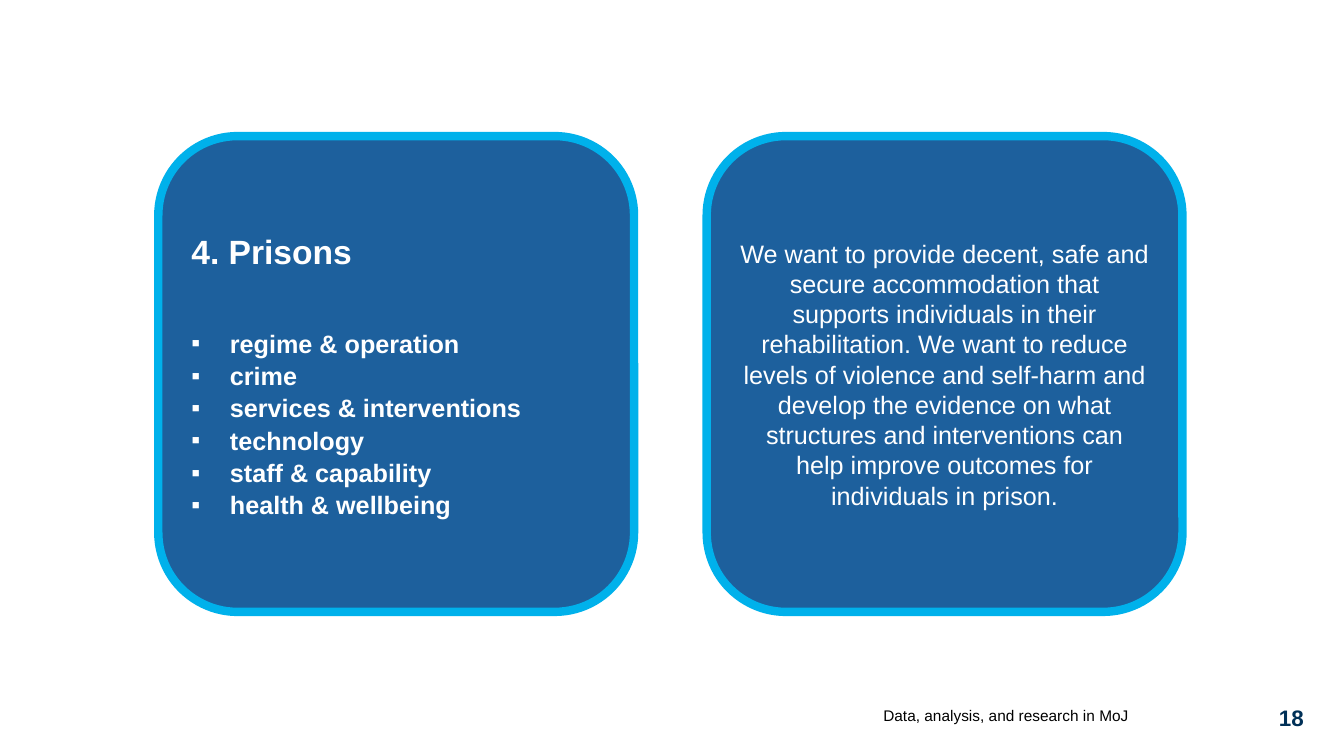
from lxml import etree
from pptx import Presentation
from pptx.dml.color import RGBColor
from pptx.enum import shapes, text
from pptx.oxml import ns
from pptx.util import Cm, Pt


class Theme:
    font = "Arial"
    panel = RGBColor.from_string("1D609D")
    border = RGBColor.from_string("00B1EB")
    white = RGBColor.from_string("FFFFFF")
    black = RGBColor.from_string("000000")
    navy = RGBColor.from_string("003057")
    heading_size = Pt(24)
    body_size = Pt(18)
    number_size = Pt(16)
    footer_size = Pt(11)


def style(paragraph, size, color, bold, align):
    paragraph.alignment = align
    for run in paragraph.runs:
        run.font.name = Theme.font
        run.font.size = size
        run.font.bold = bold
        run.font.color.rgb = color


LEFT, CENTER, RIGHT = text.PP_ALIGN.LEFT, text.PP_ALIGN.CENTER, text.PP_ALIGN.RIGHT
MIDDLE, TOP = text.MSO_ANCHOR.MIDDLE, text.MSO_ANCHOR.TOP

topics = [
    "regime & operation",
    "crime",
    "services & interventions",
    "technology",
    "staff & capability",
    "health & wellbeing",
]
aim = (
    "We want to provide decent, safe and secure accommodation that supports "
    "individuals in their rehabilitation. We want to reduce levels of violence "
    "and self-harm and develop the evidence on what structures and interventions "
    "can help improve outcomes for individuals in prison."
)

deck = Presentation()
deck.slide_width, deck.slide_height = Cm(33.87), Cm(19.05)
slide = deck.slides.add_slide(deck.slide_layouts[6])

footers = [
    ("Data, analysis, and research in MoJ", (20.55, 17.58, 7.9, 0.91),
     Theme.footer_size, Theme.black, False, RIGHT, MIDDLE),
    ("18", (32.05, 17.75, 0.99, 0.71),
     Theme.number_size, Theme.navy, True, CENTER, TOP),
]
for wording, place, size, color, bold, align, anchor in footers:
    frame = slide.shapes.add_textbox(*map(Cm, place)).text_frame
    frame.word_wrap = True
    frame.vertical_anchor = anchor
    frame.margin_left = frame.margin_right = frame.margin_top = frame.margin_bottom = 0
    frame.text = wording
    style(frame.paragraphs[0], size, color, bold, align)

panel_side, panel_pitch = 11.99, 13.82
panel_texts = []
for column in range(2):
    panel = slide.shapes.add_shape(
        shapes.MSO_SHAPE.ROUNDED_RECTANGLE,
        Cm(3.99 + column * panel_pitch), Cm(3.43), Cm(panel_side), Cm(panel_side))
    panel.shadow.inherit = False
    panel.fill.solid()
    panel.fill.fore_color.rgb = Theme.panel
    panel.line.color.rgb = Theme.border
    panel.line.width = Pt(6)
    panel.text_frame.word_wrap = True
    panel.text_frame.vertical_anchor = MIDDLE
    panel_texts.append(panel.text_frame)
prisons, purpose = panel_texts

prisons.text = "\n".join(["4. Prisons"] + topics)
heading, *topic_lines = prisons.paragraphs
style(heading, Theme.heading_size, Theme.white, True, LEFT)
heading.line_spacing = 1.07
heading.space_after = Pt(39)

for topic in topic_lines:
    properties = topic._p.get_or_add_pPr()
    properties.set("marL", str(Cm(0.97)))
    properties.set("indent", str(-Cm(0.97)))
    etree.SubElement(properties, ns.qn("a:buFont"), typeface=Theme.font)
    etree.SubElement(properties, ns.qn("a:buChar"), char="▪")
    style(topic, Theme.body_size, Theme.white, True, LEFT)
    topic.line_spacing = 1.07

purpose.text = aim
style(purpose.paragraphs[0], Theme.body_size, Theme.white, False, CENTER)

deck.save("out.pptx")
